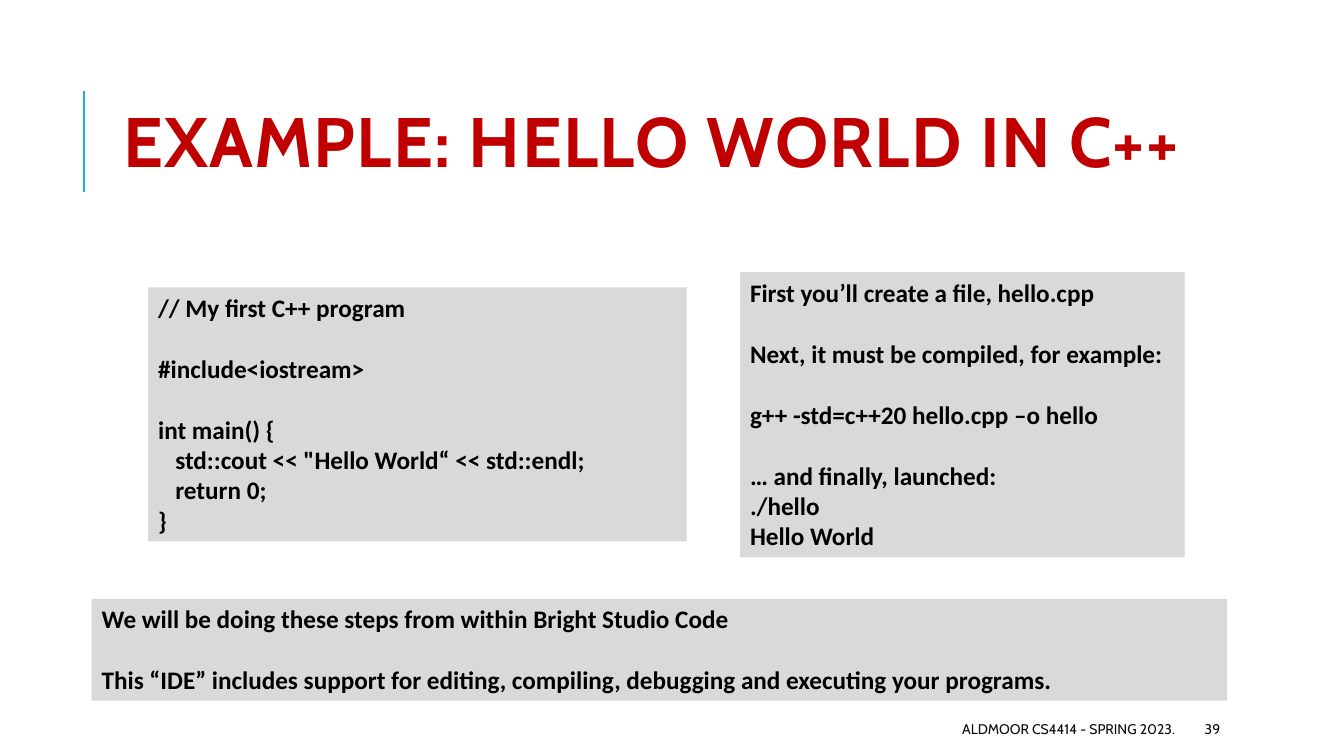
from pptx import Presentation
from pptx.dml.color import RGBColor
from pptx.enum.shapes import MSO_CONNECTOR, MSO_SHAPE
from pptx.enum.text import MSO_ANCHOR, PP_ALIGN
from pptx.oxml.ns import qn
from pptx.util import Inches, Pt

RED = RGBColor(0xC0, 0x00, 0x00)
BLUE = RGBColor(0x1C, 0xAD, 0xE4)
GRAY = RGBColor(0xD9, 0xD9, 0xD9)
BLACK = RGBColor(0x00, 0x00, 0x00)
INK = RGBColor(0x0D, 0x0D, 0x0D)
LINE_HEIGHT = 22  # one line of 18 pt panel text

SOURCE_CODE = [
    ["// My first C++ program"],
    ["#include<iostream>"],
    ["int main() {",
     "\tstd::cout << \"Hello World“ << std::endl;",
     "\treturn 0;",
     "}"],
]
STEPS = [
    ["First you’ll create a file, hello.cpp"],
    ["Next, it must be compiled, for example:"],
    ["g++ -std=c++20 hello.cpp –o hello"],
    ["… and finally, launched:", "./hello", "Hello World"],
]
IDE_NOTE = [
    ["We will be doing these steps from within Bright Studio Code"],
    ["This “IDE” includes support for editing, compiling, debugging "
     "and executing your programs."],
]


def inches(box):
    return [Inches(v) for v in box]


def write(p, text, font="Calibri", size=18, color=BLACK, bold=False,
          align=PP_ALIGN.LEFT, before=0, indent=0, tracking=0):
    """Fill one paragraph; a tracking of 1 adds 1 pt between letters."""
    p.alignment = align
    p.space_before = Pt(before)
    if indent:
        p._p.get_or_add_pPr().set("marL", str(Inches(indent)))
    r = p.add_run()
    r.text = text
    r.font.name, r.font.size, r.font.bold = font, Pt(size), bold
    r.font.color.rgb = color
    if tracking:
        r._r.get_or_add_rPr().set("spc", str(tracking * 100))


def add_title(s, text, box):
    title = s.shapes.title
    title.left, title.top, title.width, title.height = inches(box)
    tf = title.text_frame
    tf.vertical_anchor = MSO_ANCHOR.MIDDLE
    p = tf.paragraphs[0]
    p.line_spacing = 0.8
    write(p, text, font="Cabin", size=50, color=RED, bold=True, tracking=1)


def add_accent_line(s, x, top, height):
    line = s.shapes.add_connector(
        MSO_CONNECTOR.STRAIGHT, *inches((x, top + height, x, top)))
    line.line.color.rgb = BLUE
    line.line.width = Pt(1.5)
    sp_pr = line._element.spPr
    sp_pr.append(sp_pr.makeelement(qn("a:effectLst"), {}))


def add_panel(s, blocks, box):
    """Gray box holding blocks of lines, one line height apart."""
    sp = s.shapes.add_shape(MSO_SHAPE.RECTANGLE, *inches(box))
    sp.shadow.inherit = False
    sp.fill.solid()
    sp.fill.fore_color.rgb = GRAY
    sp.line.fill.background()
    tf = sp.text_frame
    tf.word_wrap = True
    tf.vertical_anchor = MSO_ANCHOR.TOP
    for b, block in enumerate(blocks):
        for i, line in enumerate(block):
            p = tf.add_paragraph() if b or i else tf.paragraphs[0]
            write(p, line.lstrip("\t"), bold=True,
                  before=LINE_HEIGHT if b and not i else 0,
                  indent=0.17 * line.count("\t"))


def add_footer(s, text, box, align):
    tf = s.shapes.add_textbox(*inches(box)).text_frame
    tf.word_wrap = True
    tf.vertical_anchor = MSO_ANCHOR.MIDDLE
    write(tf.paragraphs[0], text, font="Cabin", size=10, color=INK, align=align)


def main():
    prs = Presentation()
    prs.slide_width, prs.slide_height = inches((13.33, 7.5))
    s = prs.slides.add_slide(prs.slide_layouts[5])
    add_accent_line(s, 0.83, 0.9, 1)
    add_title(s, "EXAMPLE: HELLO WORLD IN C++", (1.12, 0.64, 11.8, 1.64))
    add_footer(s, "ALDMOOR CS4414 - SPRING 2023.", (5.3, 7.08, 6.45, 0.3),
               PP_ALIGN.RIGHT)
    add_footer(s, "39", (11.85, 7.08, 1.06, 0.3), PP_ALIGN.LEFT)
    add_panel(s, SOURCE_CODE, (1.47, 2.85, 5.34, 2.52))
    add_panel(s, STEPS, (7.34, 2.7, 4.41, 2.83))
    add_panel(s, IDE_NOTE, (0.91, 5.94, 11.26, 1.01))
    prs.save("out.pptx")


if __name__ == "__main__":
    main()
